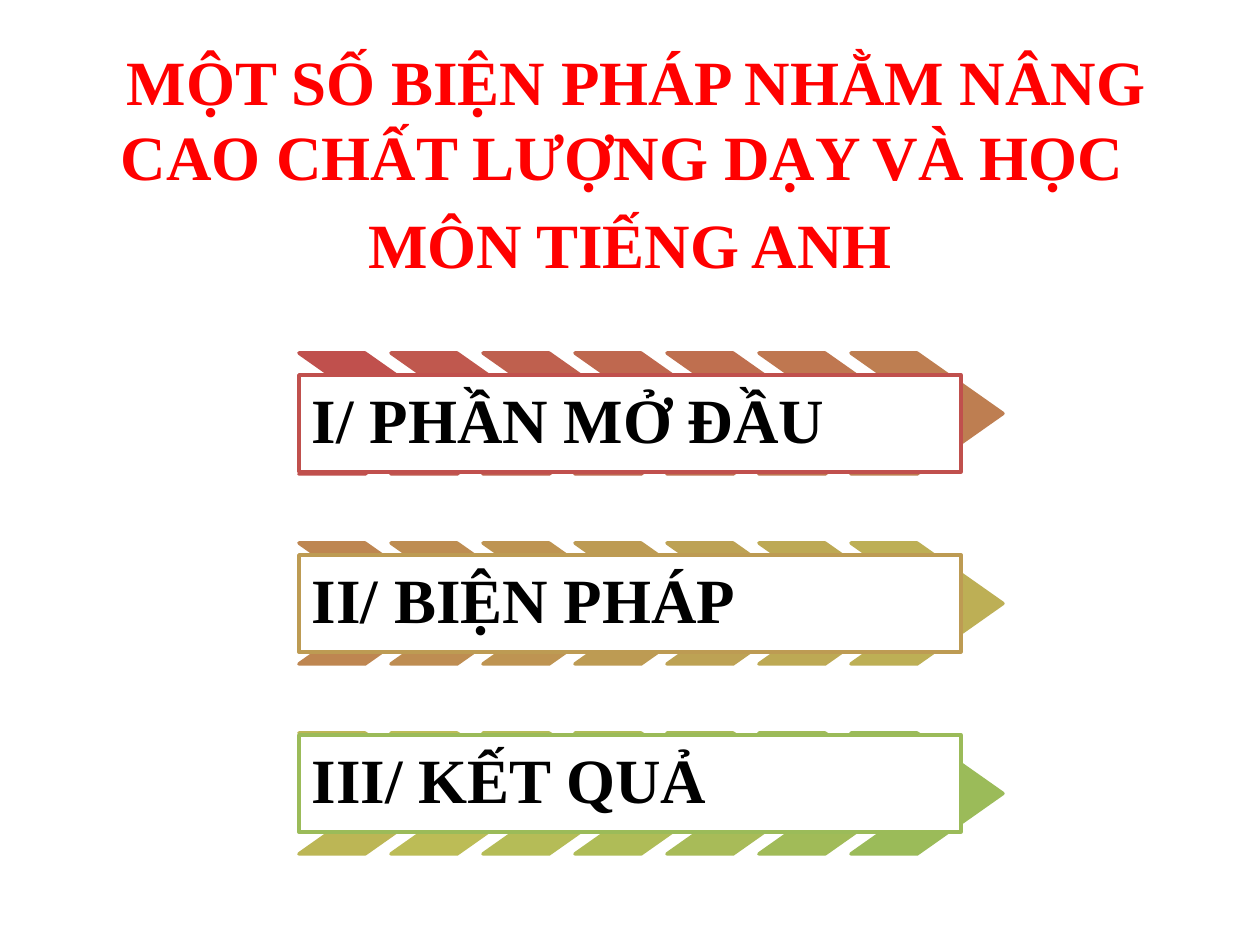
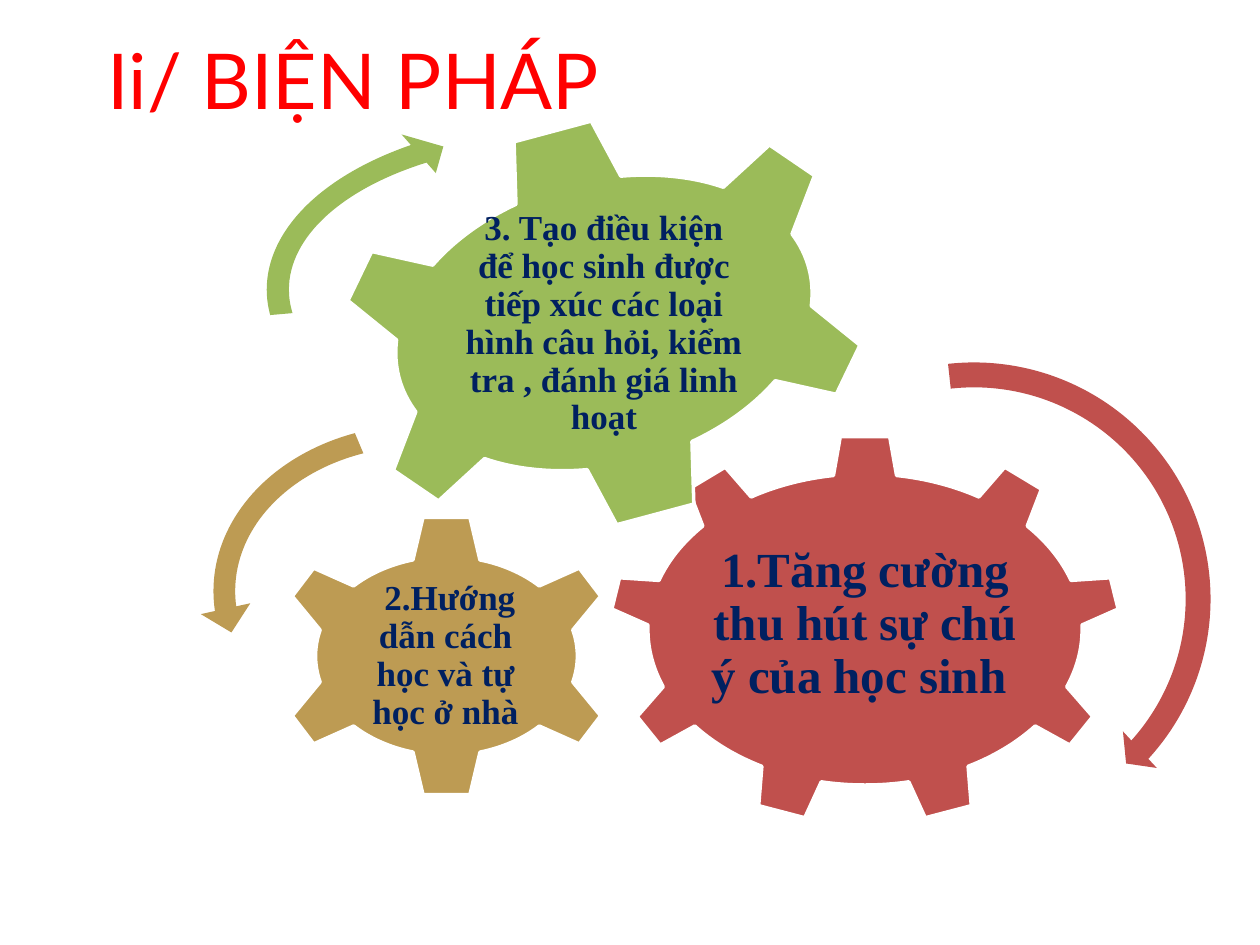
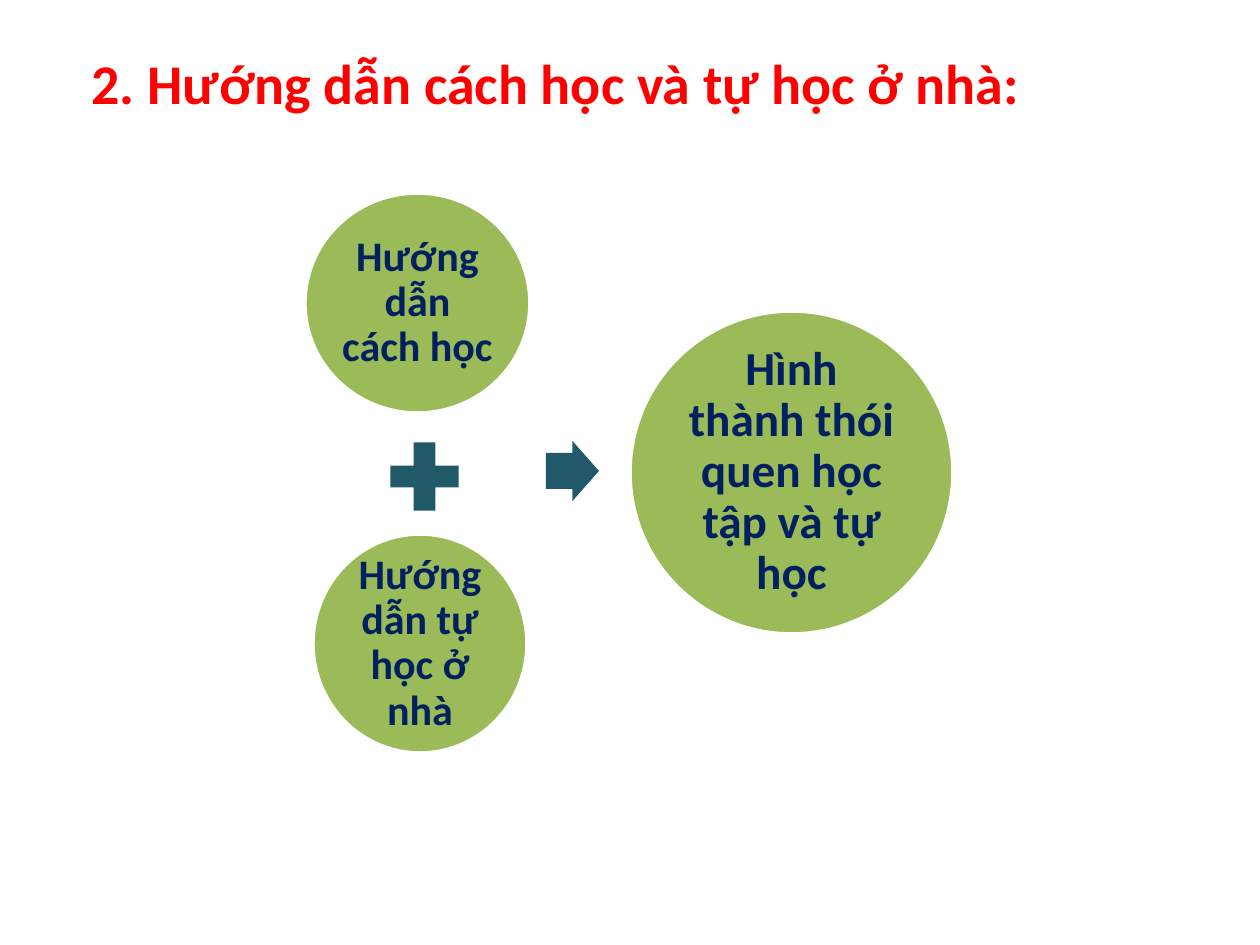
"""Build three slides on teaching and learning English."""
from colorsys import hls_to_rgb, rgb_to_hls

from lxml.etree import SubElement
from pptx import Presentation
from pptx.dml.color import RGBColor
from pptx.enum.shapes import MSO_SHAPE as KIND
from pptx.enum.text import MSO_ANCHOR, MSO_AUTO_SIZE, PP_ALIGN
from pptx.oxml.ns import qn
from pptx.util import Pt

SCALE = 914400 / 126
SERIF, SANS, HEAD = "Times New Roman", "Calibri", "Lato"
HEX = {"title": "FF0000", "ink": "002060", "black": "000000", "white": "FFFFFF",
       "red": "C0504D", "gold": "BD9B53", "green": "9BBB59", "teal": "215968"}

TOPIC = [
    [(" ", SANS, 32), ("MỘT SỐ BIỆN PHÁP NHẰM NÂNG CAO CHẤT LƯỢNG DẠY VÀ HỌC ", SERIF, 36)],
    [("MÔN TIẾNG ANH", SERIF, 36)],
]
PARTS = ["I/ PHẦN MỞ ĐẦU", "II/ BIỆN PHÁP", "III/ KẾT QUẢ"]
STEPS = 7
GEARS = [
    (KIND.GEAR_9, "red", (609, 435, 512, 389), 0, (703, 525, 324, 200), 28, 5,
     "1.Tăng cường thu hút sự chú ý của học sinh "),
    (KIND.GEAR_6, "gold", (273, 514, 347, 284), 0, (353, 586, 185, 140), 20, 4,
     " 2.Hướng dẫn cách học và tự học ở nhà"),
    (KIND.GEAR_6, "green", (331, 120, 546, 406), -15, (459, 202, 290, 244), 20, 4,
     "3. Tạo điều kiện để học sinh được tiếp xúc các loại hình câu hỏi, "
     "kiểm tra , đánh giá linh hoạt"),
]
ARCS = [
    (KIND.CIRCULAR_ARROW, "red", (725, 350, 498, 498), (0.05, 2.99, 25.35, 158.22, 0.05)),
    (KIND.LEFT_CIRCULAR_ARROW, "gold", (199, 410, 444, 362), (0.06, 4.3, 104.89, 148.38, 0.07)),
    (KIND.CIRCULAR_ARROW, "green", (252, 105, 636, 369), (0.06, 3.94, 133.14, 105.08, 0.07)),
]
DISCS = [
    ("Hướng dẫn cách học", (305, 193, 225, 220), 24, 4),
    ("Hướng dẫn tự học ở nhà", (313, 534, 214, 219), 24, 4),
    ("Hình thành thói quen học tập và tự học", (630, 311, 323, 323), 27, 5),
]
SIGNS = [
    (KIND.MATH_PLUS, (378, 430, 93, 93), ()),
    (KIND.RIGHT_ARROW, (546, 441, 53, 60), (0.6, 0.5)),
]


def px(num):
    """Turn px into EMU."""
    return round(num * SCALE)


def rgb(name):
    """Give the colour for a name or a hex string."""
    return RGBColor.from_string(HEX.get(name, name))


def blend(part):
    """Give the hex colour at a part of the way from red to green."""
    ends = [rgb_to_hls(*(c / 255 for c in rgb(n))) for n in ("red", "green")]
    mix = [a + (b - a) * part for a, b in zip(*ends)]
    return "".join(f"{round(c * 255):02X}" for c in hls_to_rgb(*mix))


def draw(slide, kind, box, fill, line=None, adj=(), turn=0):
    """Add a flat preset shape."""
    shape = slide.shapes.add_shape(kind, *map(px, box))
    shape.shadow.inherit = False
    shape.fill.solid()
    shape.fill.fore_color.rgb = rgb(fill)
    if line:
        shape.line.color.rgb = rgb(line)
        shape.line.width = Pt(2)
    else:
        shape.line.fill.background()
    for i, val in enumerate(adj):
        shape.adjustments[i] = val
    shape.rotation = turn
    return shape


def add_run(para, text, font, size, color, bold=True):
    """Add one styled run."""
    run = para.add_run()
    run.text = text
    run.font.name, run.font.size, run.font.bold = font, Pt(size), bold
    run.font.color.rgb = rgb(color)


def label(shape, text, font, size, pad, color="ink", align=PP_ALIGN.CENTER):
    """Write one wrapped label centred by height in a shape."""
    frame = shape.text_frame
    frame.word_wrap = True
    frame.vertical_anchor = MSO_ANCHOR.MIDDLE
    frame.margin_left = frame.margin_right = px(pad)
    frame.margin_top = frame.margin_bottom = px(pad)
    para = frame.paragraphs[0]
    para.alignment, para.line_spacing = align, 0.9
    add_run(para, text, font, size, color)


def place(shape, box):
    """Move a placeholder and give its frame."""
    shape.left, shape.top, shape.width, shape.height = map(px, box)
    shape.text_frame.auto_size = MSO_AUTO_SIZE.NONE
    return shape.text_frame


def head(slide, text, box, font, size, bold, align):
    """Fill the title."""
    frame = place(slide.shapes.title, box)
    frame.vertical_anchor = MSO_ANCHOR.MIDDLE
    para = frame.paragraphs[0]
    para.alignment = align
    add_run(para, text, font, size, "title", bold)


def outline(slide):
    """Draw the topic and the three parts."""
    title = slide.shapes.title
    title.element.getparent().remove(title.element)
    frame = place(slide.placeholders[1], (63, 36, 1134, 352))
    for i, runs in enumerate(TOPIC):
        para = frame.add_paragraph() if i else frame.paragraphs[0]
        props = para._p.get_or_add_pPr()
        props.set("marL", "0")
        props.set("indent", "0")
        SubElement(props, qn("a:buNone"))
        para.alignment = PP_ALIGN.CENTER
        para.space_before = Pt(7 if i else 0)
        for run in runs:
            add_run(para, *run, "title")
    last = len(PARTS) * STEPS - 1
    for row, text in enumerate(PARTS):
        for col in range(STEPS):
            tone = blend((row * STEPS + col) / last)
            box = (299 + 92 * col, 353 + 190 * row, 152, 121)
            draw(slide, KIND.CHEVRON, box, tone, tone, (0.71,))
        edge = blend(row / (len(PARTS) - 1))
        bar = draw(slide, KIND.RECTANGLE, (299, 375 + 180 * row, 662, 97), "white", edge)
        label(bar, text, SERIF, 36, 13, "black", PP_ALIGN.LEFT)


def gears(slide):
    """Draw the three linked gears."""
    head(slide, "Ii/ BIỆN PHÁP", (95, 0, 1134, 158), HEAD, 44, False, PP_ALIGN.LEFT)
    for kind, tone, box, turn, area, size, pad, text in GEARS:
        draw(slide, kind, box, tone, "white", turn=turn)
        label(slide.shapes.add_textbox(*map(px, area)), text, SERIF, size, pad)
    for kind, tone, box, adj in ARCS:
        draw(slide, kind, box, tone, adj=adj)


def total(slide):
    """Draw the sum of two discs and its result."""
    head(slide, "2. Hướng dẫn cách học và tự học ở nhà:", (-32, 3, 1176, 158),
         SANS, 32, True, PP_ALIGN.CENTER)
    for text, box, size, pad in DISCS:
        label(draw(slide, KIND.OVAL, box, "green", "white"), text, SANS, size, pad)
    for kind, box, adj in SIGNS:
        draw(slide, kind, box, "teal", adj=adj)


def main():
    """Build and save the deck."""
    deck = Presentation()
    deck.slide_width, deck.slide_height = px(1260), px(945)
    for build, layout in ((outline, 1), (gears, 5), (total, 5)):
        build(deck.slides.add_slide(deck.slide_layouts[layout]))
    deck.save("out.pptx")


if __name__ == "__main__":
    main()
